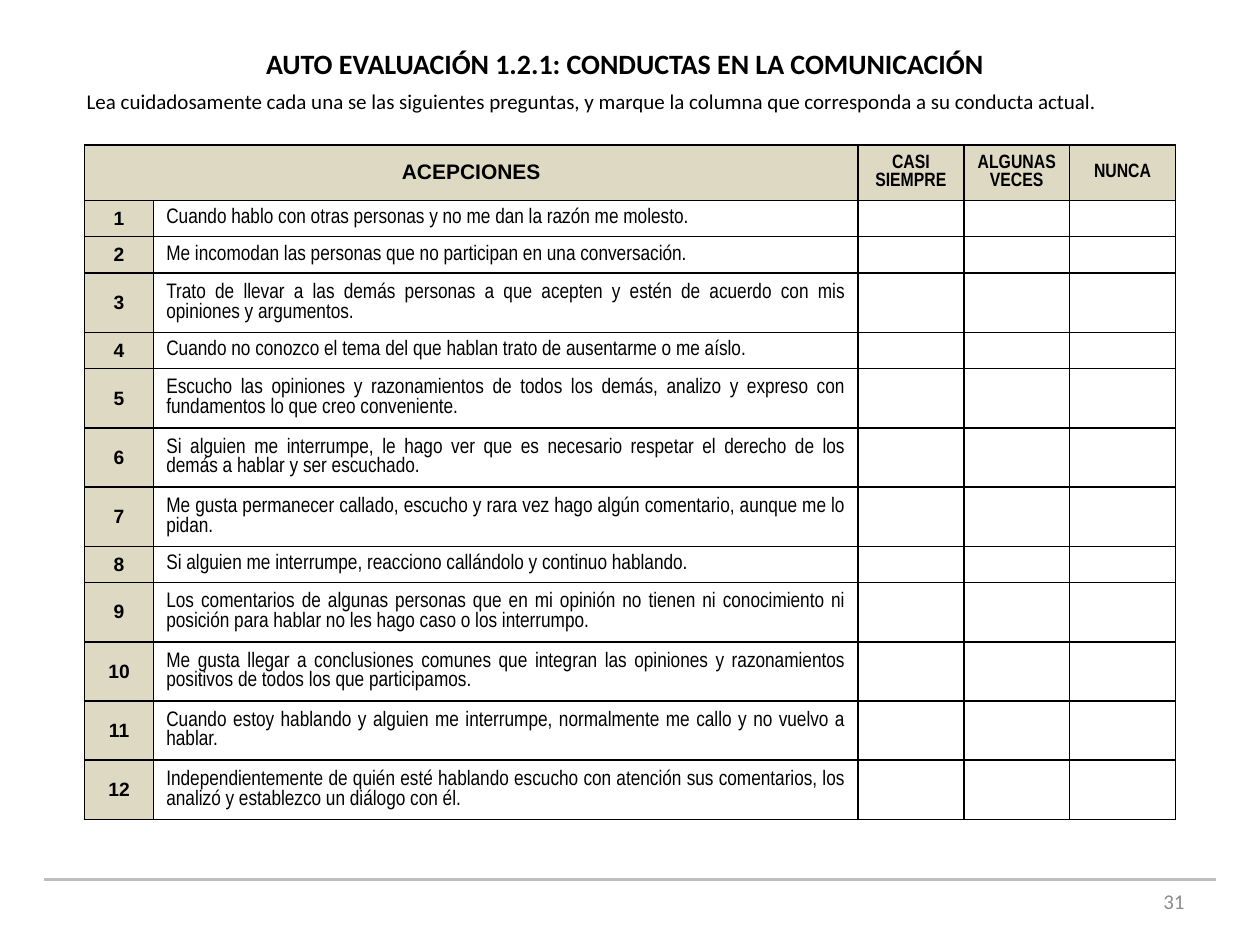
from lxml import etree
from pptx import Presentation
from pptx.dml.color import RGBColor
from pptx.enum import shapes, text
from pptx.oxml import ns
from pptx.util import Inches, Pt

BLACK, WHITE, SAND, SILVER, GRAY = "000000", "FFFFFF", "DDD9C3", "BFBFBF", "8C8C8C"
LEFT, CENTER = text.PP_ALIGN.LEFT, text.PP_ALIGN.CENTER
RIGHT, JUSTIFY = text.PP_ALIGN.RIGHT, text.PP_ALIGN.JUSTIFY
COLUMN_WIDTHS = [0.55, 5.59, 0.84, 0.84, 0.84]
HEADER_HEIGHT, SHORT_ROW, LONG_ROW = 0.44, 0.28, 0.47
LINE_CAPACITY = 75
ANSWERS = ["CASI SIEMPRE", "ALGUNAS VECES", "NUNCA"]
STATEMENTS = [
    "Cuando hablo con otras personas y no me dan la razón me molesto.",
    "Me incomodan las personas que no participan en una conversación.",
    "Trato de llevar a las demás personas a que acepten y estén de acuerdo con mis opiniones y argumentos.",
    "Cuando no conozco el tema del que hablan trato de ausentarme o me aíslo.",
    "Escucho las opiniones y razonamientos de todos los demás, analizo y expreso con fundamentos lo que creo conveniente.",
    "Si alguien me interrumpe, le hago ver que es necesario respetar el derecho de los demás a hablar y ser escuchado.",
    "Me gusta permanecer callado, escucho y rara vez hago algún comentario, aunque me lo pidan.",
    "Si alguien me interrumpe, reacciono callándolo y continuo hablando.",
    "Los comentarios de algunas personas que en mi opinión no tienen ni conocimiento ni posición para hablar no les hago caso o los interrumpo.",
    "Me gusta llegar a conclusiones comunes que integran las opiniones y razonamientos positivos de todos los que participamos.",
    "Cuando estoy hablando y alguien me interrumpe, normalmente me callo y no vuelvo a hablar.",
    "Independientemente de quién esté hablando escucho con atención sus comentarios, los analizó y establezco un diálogo con él.",
]


def rgb(value):
    return RGBColor.from_string(value)


def write(frame, words, size, font, align, bold=False, color=BLACK):
    frame.text = words
    para = frame.paragraphs[0]
    para.alignment = align
    for span in para.runs:
        span.font.size = Pt(size)
        span.font.name = font
        span.font.bold = bold
        span.font.color.rgb = rgb(color)


def add_text(page, area, words, size, align, bold=False, color=BLACK,
             anchor=text.MSO_ANCHOR.TOP):
    box = page.shapes.add_textbox(*map(Inches, area))
    box.text_frame.word_wrap = True
    box.text_frame.vertical_anchor = anchor
    write(box.text_frame, words, size, "Calibri", align, bold, color)


def add_rule(page, left, right, top):
    rule = page.shapes.add_connector(
        shapes.MSO_CONNECTOR.STRAIGHT,
        Inches(left), Inches(top), Inches(right), Inches(top))
    rule.line.color.rgb = rgb(SILVER)
    rule.line.width = Pt(2)
    etree.SubElement(rule._element.spPr, ns.qn("a:effectLst"))


def add_borders(cell):
    properties = cell._tc.get_or_add_tcPr()
    for position, side in enumerate(("a:lnL", "a:lnR", "a:lnT", "a:lnB")):
        border = etree.Element(ns.qn(side), w=str(Pt(1)))
        fill = etree.SubElement(border, ns.qn("a:solidFill"))
        etree.SubElement(fill, ns.qn("a:srgbClr"), val=BLACK)
        properties.insert(position, border)


def style_cell(cell, fill):
    cell.fill.solid()
    cell.fill.fore_color.rgb = rgb(fill)
    cell.vertical_anchor = text.MSO_ANCHOR.MIDDLE
    add_borders(cell)
    if not cell.text:
        para = cell.text_frame.paragraphs[0]._p
        etree.SubElement(para, ns.qn("a:endParaRPr"), sz="1100")


def add_questionnaire(page, left, top):
    heights = [HEADER_HEIGHT] + [
        LONG_ROW if len(statement) > LINE_CAPACITY else SHORT_ROW
        for statement in STATEMENTS]
    table = page.shapes.add_table(
        len(heights), len(COLUMN_WIDTHS), Inches(left), Inches(top),
        Inches(sum(COLUMN_WIDTHS)), Inches(sum(heights))).table
    table.horz_banding = False
    for column, width in zip(table.columns, COLUMN_WIDTHS):
        column.width = Inches(width)
    for row, height in zip(table.rows, heights):
        row.height = Inches(height)

    table.cell(0, 0).merge(table.cell(0, 1))
    write(table.cell(0, 0).text_frame, "ACEPCIONES", 12, "Arial", CENTER, True)
    for column, answer in enumerate(ANSWERS, 2):
        write(table.cell(0, column).text_frame, answer, 11, "Arial Narrow", CENTER, True)
    for row, statement in enumerate(STATEMENTS, 1):
        write(table.cell(row, 0).text_frame, str(row), 11, "Arial", CENTER, True)
        write(table.cell(row, 1).text_frame, statement, 12, "Arial Narrow", JUSTIFY)
    for row in range(len(heights)):
        for column in range(len(COLUMN_WIDTHS)):
            shaded = row == 0 or column == 0
            style_cell(table.cell(row, column), SAND if shaded else WHITE)


def main():
    deck = Presentation()
    deck.slide_width, deck.slide_height = Inches(10), Inches(7.5)
    page = deck.slides.add_slide(deck.slide_layouts[6])
    add_rule(page, 0.35, 9.65, 6.98)
    add_questionnaire(page, 0.67, 1.15)
    add_text(page, (0.67, 0.32, 8.58, 0.37),
             "AUTO EVALUACIÓN 1.2.1: CONDUCTAS EN LA COMUNICACIÓN", 16, CENTER, True)
    add_text(page, (0.59, 0.65, 8.74, 0.5),
             "Lea cuidadosamente cada una se las siguientes preguntas, "
             "y marque la columna que corresponda a su conducta actual.", 12, JUSTIFY)
    add_text(page, (7.17, 6.95, 2.33, 0.4), "31", 12, RIGHT,
             color=GRAY, anchor=text.MSO_ANCHOR.MIDDLE)
    deck.save("out.pptx")


if __name__ == "__main__":
    main()
